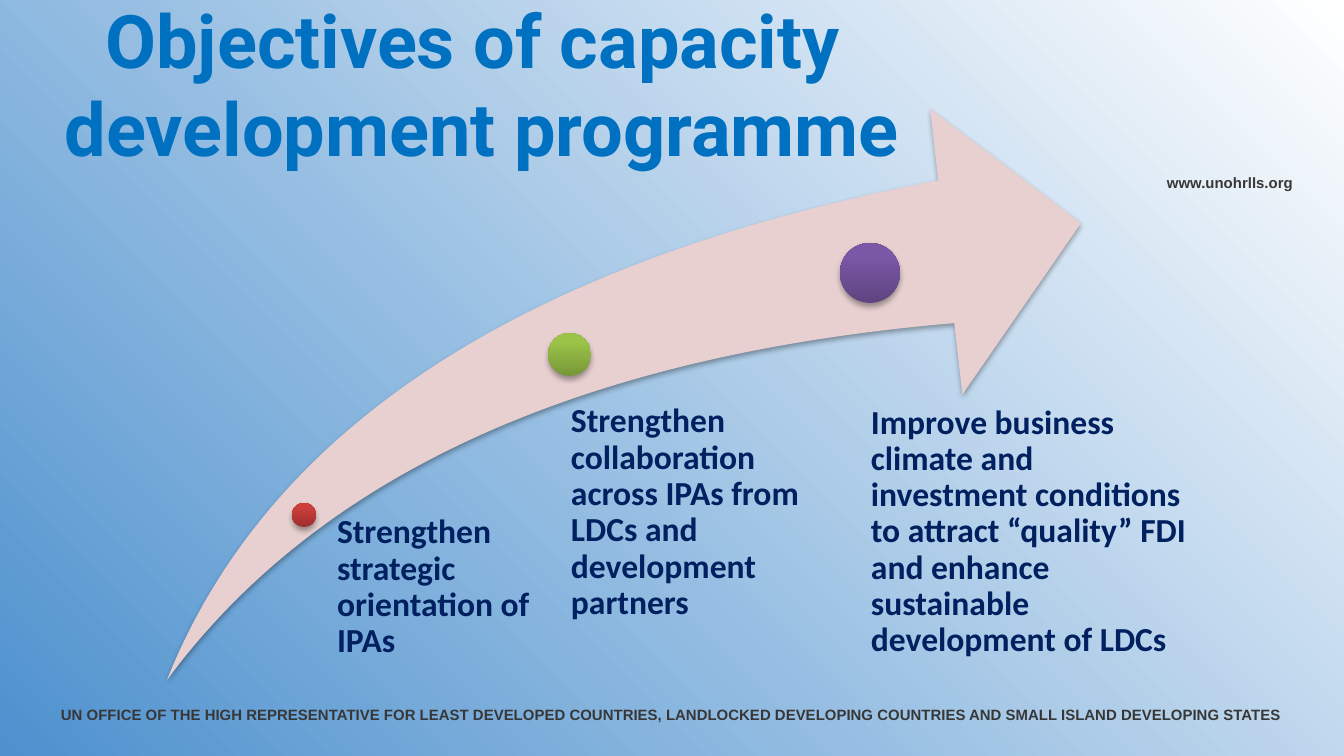
"""Build the slide on the objectives of the capacity development programme."""
from lxml.etree import SubElement
from pptx import Presentation
from pptx.dml.color import RGBColor
from pptx.enum.shapes import MSO_SHAPE as Shape
from pptx.enum.text import MSO_ANCHOR as Anchor, MSO_AUTO_SIZE as AutoSize, PP_ALIGN as Align
from pptx.oxml.ns import qn
from pptx.util import Emu, Pt

SLIDE_W, SLIDE_H = 1344, 756
EMU_PER_PX = 9144000 / SLIDE_W
OBJECTIVES = [
    ((125, 394, 24), ("9C2F2D", "CB3E3A"), (158, 406, 212), 12,
     "Strengthen strategic orientation of IPAs"),
    ((381, 224, 43), ("779737", "9BC348"), (381, 295, 274), 23,
     "Strengthen collaboration across IPAs from LDCs and development partners"),
    ((673, 134, 60), ("5F4480", "7B58A6"), (673, 296, 352), 31,
     "Improve business climate and investment conditions to attract “quality” FDI "
     "and enhance sustainable development of LDCs"),
]


def px(length):
    """Turn pixels into EMU."""
    return Emu(round(length * EMU_PER_PX))


def rgb(value):
    """Turn a hex string into a colour."""
    return RGBColor.from_string(value)


def fill_gradient(fill, colors, angle, end=1.0):
    """Fill with a linear gradient of two colours."""
    fill.gradient()
    fill.gradient_angle = angle
    for stop, color, position in zip(fill.gradient_stops, colors, (0, end)):
        stop.color.rgb = rgb(color)
        stop.position = position


def add_shadow(shape):
    """Give a shape a soft shadow straight below it."""
    shape.shadow.inherit = False
    effects = shape._element.spPr.find(qn("a:effectLst"))
    shadow = SubElement(effects, qn("a:outerShdw"), blurRad=str(Pt(3.1)),
                        dist=str(Pt(1.8)), dir="5400000", rotWithShape="0")
    black = SubElement(shadow, qn("a:srgbClr"), val="000000")
    SubElement(black, qn("a:alpha"), val="35000")


def write(frame, text, *, size, font, color, align=Align.LEFT, anchor=Anchor.TOP,
          spacing=None, insets=None):
    """Put bold formatted text into a text frame."""
    frame.text = text
    frame.word_wrap = True
    frame.auto_size = AutoSize.NONE
    frame.vertical_anchor = anchor
    if insets:
        (frame.margin_left, frame.margin_top,
         frame.margin_right, frame.margin_bottom) = map(px, insets)
    paragraph = frame.paragraphs[0]
    paragraph.alignment = align
    if spacing:
        paragraph.line_spacing = spacing
    for run in paragraph.runs:
        run.font.size, run.font.name, run.font.bold = Pt(size), font, True
        run.font.color.rgb = rgb(color)


def add_label(slide, box, text, **text_format):
    """Add a text box with formatted text."""
    label = slide.shapes.add_textbox(*map(px, box))
    write(label.text_frame, text, **text_format)


def add_figure(slide, kind, box):
    """Add a preset shape without outline and with a shadow."""
    figure = slide.shapes.add_shape(kind, *map(px, box))
    figure.line.fill.background()
    add_shadow(figure)
    return figure


def place_title(slide, box):
    """Move and fill the title placeholder."""
    title = slide.shapes.title
    title.left, title.top, title.width, title.height = map(px, box)
    write(title.text_frame, "Objectives of capacity \vdevelopment programme", size=39.6,
          font="Roboto", color="0070C0", align=Align.CENTER, anchor=Anchor.MIDDLE)


def place_office_line(slide, box, text):
    """Add a small centred line about the office."""
    add_label(slide, box, text, size=8, font="Arial", color="373737", align=Align.CENTER)


def place_objectives(slide, box):
    """Draw the rising arrow with its milestones and their objectives."""
    left, top, _, height = box
    arrow = add_figure(slide, Shape.SWOOSH_ARROW, box)
    arrow.adjustments[0] = arrow.adjustments[1] = 0.25
    arrow.fill.solid()
    arrow.fill.fore_color.rgb = rgb("E8D0D0")
    for (dot_x, dot_y, side), colors, (x, y, width), inset, objective in OBJECTIVES:
        milestone = add_figure(slide, Shape.OVAL, (left + dot_x, top + dot_y, side, side))
        fill_gradient(milestone.fill, colors, 90, end=0.8)
        add_label(slide, (left + x, top + y, width, height - y), objective, size=18,
                  font="Calibri", color="002060", spacing=0.9, insets=(inset, 0, 0, 0))


def main():
    """Build and save the presentation."""
    deck = Presentation()
    deck.slide_width, deck.slide_height = px(SLIDE_W), px(SLIDE_H)
    slide = deck.slides.add_slide(deck.slide_layouts[5])
    fill_gradient(slide.background.fill, ("4E91CE", "FFFFFF"), 45)
    place_office_line(slide, (0, 699, SLIDE_W, 50),
                      "UN OFFICE OF THE HIGH REPRESENTATIVE FOR LEAST DEVELOPED COUNTRIES, "
                      "LANDLOCKED DEVELOPING COUNTRIES AND SMALL ISLAND DEVELOPING STATES")
    place_office_line(slide, (1116, 167, 228, 50), "www.unohrlls.org")
    place_title(slide, (0, 20, 964, 126))
    place_objectives(slide, (167, 109, 914, 571))
    deck.save("out.pptx")


if __name__ == "__main__":
    main()
